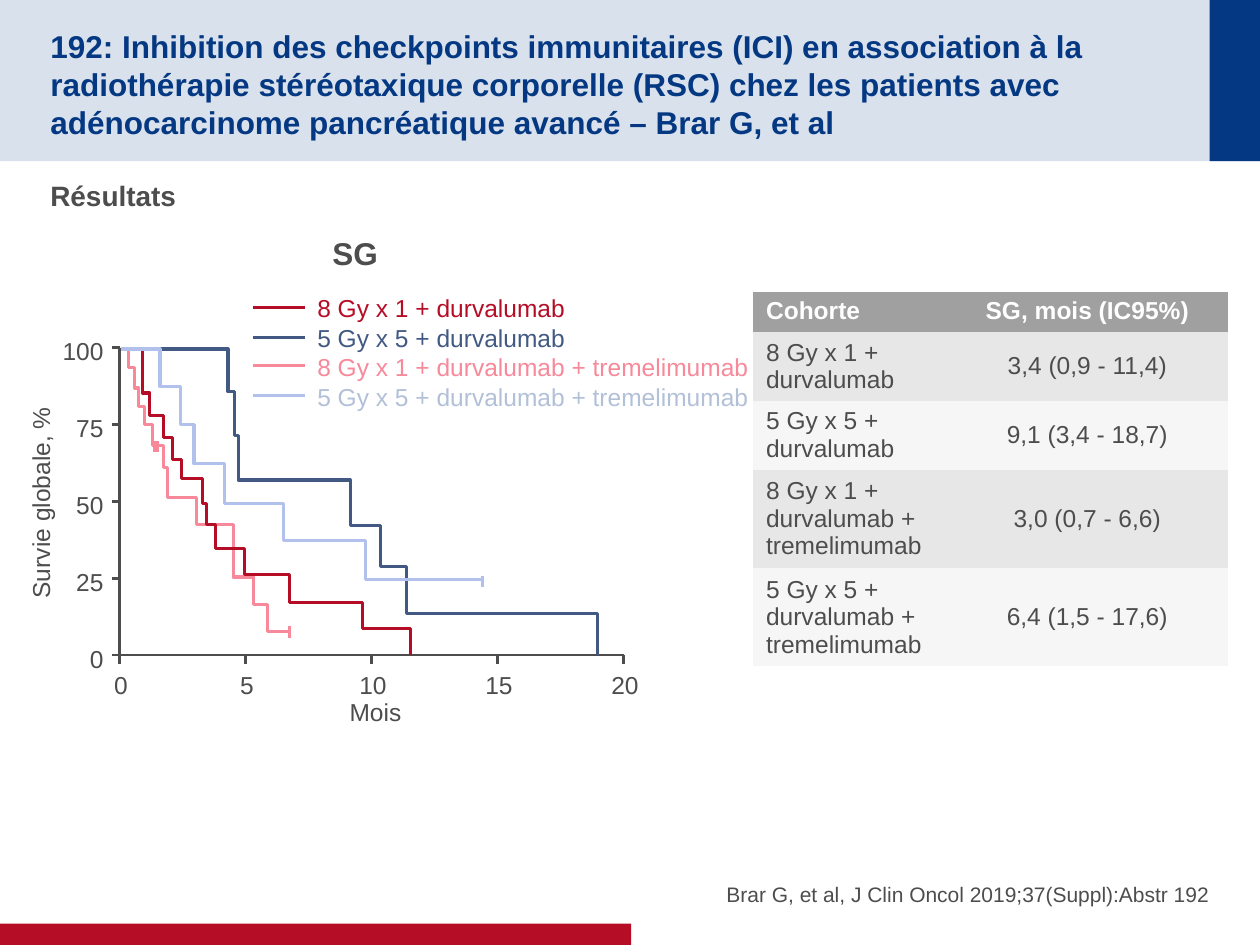
"""Build the overall survival slide: step curves by cohort and a results table."""
from lxml.etree import SubElement
from pptx import Presentation
from pptx.dml.color import RGBColor as RGB
from pptx.enum.shapes import MSO_CONNECTOR as LINE, MSO_SHAPE as SHAPE
from pptx.enum.text import MSO_ANCHOR as ANCHOR, PP_ALIGN as ALIGN
from pptx.oxml.ns import qn
from pptx.util import Inches, Pt

NAVY = RGB(0x04, 0x38, 0x82)
PALE = RGB(0xD9, 0xE1, 0xEC)
RED = RGB(0xB6, 0x0D, 0x27)
GREY = RGB(0x4D, 0x4D, 0x4D)
SLATE = RGB(0x42, 0x5A, 0x83)
PINK = RGB(0xF7, 0x89, 0x9A)
SKY = RGB(0xB2, 0xC0, 0xEC)
MIST = RGB(0xB2, 0xC0, 0xD8)
WHITE = RGB(0xFF, 0xFF, 0xFF)
HEAD = RGB(0xA0, 0xA0, 0xA0)
DARK = RGB(0xE7, 0xE7, 0xE7)
LIGHT = RGB(0xF6, 0xF6, 0xF6)

PLAIN = "{2D5ABB26-0587-4C30-8999-92F81FD0307C}"
LEFT, TOP, BASE = 0.95, 2.76, 5.2
START = (0.96, 2.77)

CURVES = [
    (PINK, [(1.02, 2.92), (1.07, 3.08), (1.1, 3.23), (1.15, 3.37), (1.21, 3.54),
            (1.3, 3.71), (1.33, 3.95), (1.56, 4.16), (1.85, 4.58), (2.01, 4.8),
            (2.12, 5.01), (2.31, 5.01)]),
    (RED, [(1.13, 3.12), (1.19, 3.3), (1.3, 3.47), (1.37, 3.65), (1.44, 3.8),
           (1.61, 4), (1.64, 4.16), (1.71, 4.35), (1.94, 4.56), (2.3, 4.78),
           (2.88, 4.99), (3.26, 5.2)]),
    (SLATE, [(1.81, 3.11), (1.86, 3.46), (1.89, 3.81), (2.78, 4.17),
             (3.02, 4.5), (3.23, 4.87), (4.74, 5.2)]),
    (SKY, [(1.27, 3.07), (1.43, 3.37), (1.54, 3.68), (1.78, 4), (2.25, 4.29),
           (2.9, 4.6), (3.84, 4.6)]),
]
MARKS = [(PINK, 2.3, 4.97), (PINK, 1.23, 3.5), (PINK, 1.25, 3.5), (SKY, 3.83, 4.57)]

ARMS = [
    ("8 Gy x 1 + durvalumab", "3,4 (0,9 - 11,4)", RED, RED, 2.44),
    ("5 Gy x 5 + durvalumab", "9,1 (3,4 - 18,7)", SLATE, SLATE, 2.68),
    ("8 Gy x 1 + durvalumab + tremelimumab", "3,0 (0,7 - 6,6)", PINK, PINK, 2.9),
    ("5 Gy x 5 + durvalumab + tremelimumab", "6,4 (1,5 - 17,6)", MIST, SKY, 3.14),
]


class Deck:
    """Hold the text style and the current slide."""

    def __init__(self, slide, font="Arial", size=14):
        self.shapes = slide.shapes
        self.font, self.size = font, size

    def run(self, para, text, color=GREY, size=None, bold=False, align=ALIGN.LEFT):
        para.alignment = align
        run = para.add_run()
        run.text = text
        font = run.font
        font.name, font.size, font.bold = self.font, Pt(size or self.size), bold
        font.color.rgb = color

    def text(self, box, lines, pad=(0.1, 0.05, 0.1, 0.05), anchor=ANCHOR.TOP,
             wrap=False, turn=0, **style):
        shape = self.shapes.add_textbox(*map(Inches, box))
        shape.rotation = turn
        frame = shape.text_frame
        frame.word_wrap, frame.vertical_anchor = wrap, anchor
        (frame.margin_left, frame.margin_top,
         frame.margin_right, frame.margin_bottom) = map(Inches, pad)
        for i, (line, color) in enumerate(lines):
            para = frame.add_paragraph() if i else frame.paragraphs[0]
            self.run(para, line, color, **style)

    def rect(self, box, color):
        shape = self.shapes.add_shape(SHAPE.RECTANGLE, *map(Inches, box))
        shape.shadow.inherit = False
        shape.fill.solid()
        shape.fill.fore_color.rgb = color
        shape.line.fill.background()

    def line(self, x1, y1, x2, y2, color=GREY, width=1.5):
        line = self.shapes.add_connector(LINE.STRAIGHT, *map(Inches, (x1, y1, x2, y2)))
        line.line.color.rgb, line.line.width = color, Pt(width)
        SubElement(line._element.spPr, qn("a:effectLst"))

    def trace(self, points, color=GREY, width=1.5):
        spots = [(Inches(x), Inches(y)) for x, y in points]
        form = self.shapes.build_freeform(*spots[0])
        form.add_line_segments(spots[1:], close=False)
        shape = form.convert_to_shape()
        shape.shadow.inherit = False
        shape.fill.background()
        shape.line.color.rgb, shape.line.width = color, Pt(width)

    def steps(self, drops, color):
        points = [START]
        for x, y in drops:
            points += [(x, points[-1][1]), (x, y)]
        self.trace(points, color, 1.75)

    def table(self, x, y, wide, high, rows):
        grid = self.shapes.add_table(len(rows), len(wide), Inches(x), Inches(y),
                                     Inches(sum(wide)), Inches(sum(high))).table
        grid._tbl.tblPr.find(qn("a:tableStyleId")).text = PLAIN
        for col, size in zip(grid.columns, wide):
            col.width = Inches(size)
        for i, row in enumerate(rows):
            grid.rows[i].height = Inches(high[i])
            for j, word in enumerate(row):
                cell = grid.cell(i, j)
                cell.margin_top = cell.margin_bottom = Inches(0.04)
                cell.vertical_anchor = ANCHOR.MIDDLE if i else ANCHOR.TOP
                cell.fill.solid()
                cell.fill.fore_color.rgb = (DARK if i % 2 else LIGHT) if i else HEAD
                self.run(cell.text_frame.paragraphs[0], word, GREY if i else WHITE,
                         bold=not i, align=ALIGN.CENTER if j else ALIGN.LEFT)


def frame(deck):
    """Draw the bands, title, heading and citation."""
    deck.rect((0, 0, 10, 1.28), PALE)
    deck.rect((9.6, 0, 0.4, 1.28), NAVY)
    deck.rect((0, 7.33, 5.01, 0.17), RED)
    title = ("192: Inhibition des checkpoints immunitaires (ICI) en association à la "
             "radiothérapie stéréotaxique corporelle (RSC) chez les patients avec "
             "adénocarcinome pancréatique avancé – Brar G, et al")
    deck.text((0.4, 0.2, 9.01, 0.88), [(title, NAVY)], (0, 0.05, 0, 0),
              ANCHOR.MIDDLE, True, size=18, bold=True)
    deck.text((0.4, 1.37, 9.2, 0.4), [("Résultats", GREY)], (0, 0.05, 0, 0.05),
              wrap=True, size=16, bold=True)
    cite = "Brar G, et al, J Clin Oncol 2019;37(Suppl):Abstr 192"
    deck.text((5.08, 6.67, 4.52, 0.53), [(cite, GREY)], (0, 0, 0, 0),
              ANCHOR.BOTTOM, True, size=12, align=ALIGN.RIGHT)


def axes(deck):
    """Draw both axes with ticks and labels."""
    for i in range(5):
        x, y = LEFT + i, TOP + 0.61 * i
        deck.line(LEFT - 0.06, y, LEFT, y)
        deck.line(x, BASE + 0.07, x, BASE)
        deck.text((0.37, y - 0.14, 0.55, 0.34), [(str(100 - 25 * i), GREY)],
                  align=ALIGN.RIGHT)
        deck.text((x - 0.2, 5.27, 0.42, 0.34), [(str(5 * i), GREY)],
                  align=ALIGN.CENTER)
    deck.trace([(LEFT, TOP), (LEFT, BASE), (LEFT + 4, BASE)])
    deck.text((-0.56, 3.82, 1.77, 0.34), [("Survie globale, %", GREY)],
              turn=270, align=ALIGN.CENTER)
    deck.text((2.67, 5.48, 0.62, 0.34), [("Mois", GREY)], align=ALIGN.CENTER)


def plot(deck):
    """Draw the legend, curves and censor marks."""
    deck.text((2.54, 1.81, 0.57, 0.4), [("SG", GREY)], size=18, bold=True)
    deck.text((2.42, 2.28, 3.64, 1.04), [(arm[0], arm[2]) for arm in ARMS])
    for *_, color, y in ARMS:
        deck.line(2.01, y, 2.42, y, color, 1.75)
    for color, x, y in MARKS:
        deck.line(x, y, x, y + 0.09, color, 1.75)
    for color, drops in CURVES:
        deck.steps(drops, color)


def main():
    """Build and save the slide."""
    prs = Presentation()
    prs.slide_width, prs.slide_height = Inches(10), Inches(7.5)
    deck = Deck(prs.slides.add_slide(prs.slide_layouts[6]))
    frame(deck)
    rows = [("Cohorte", "SG, mois (IC95%)")] + [arm[:2] for arm in ARMS]
    deck.table(5.98, 2.32, (1.53, 2.24), (0.29, 0.52, 0.52, 0.73, 0.73), rows)
    axes(deck)
    plot(deck)
    prs.save("out.pptx")


if __name__ == "__main__":
    main()
